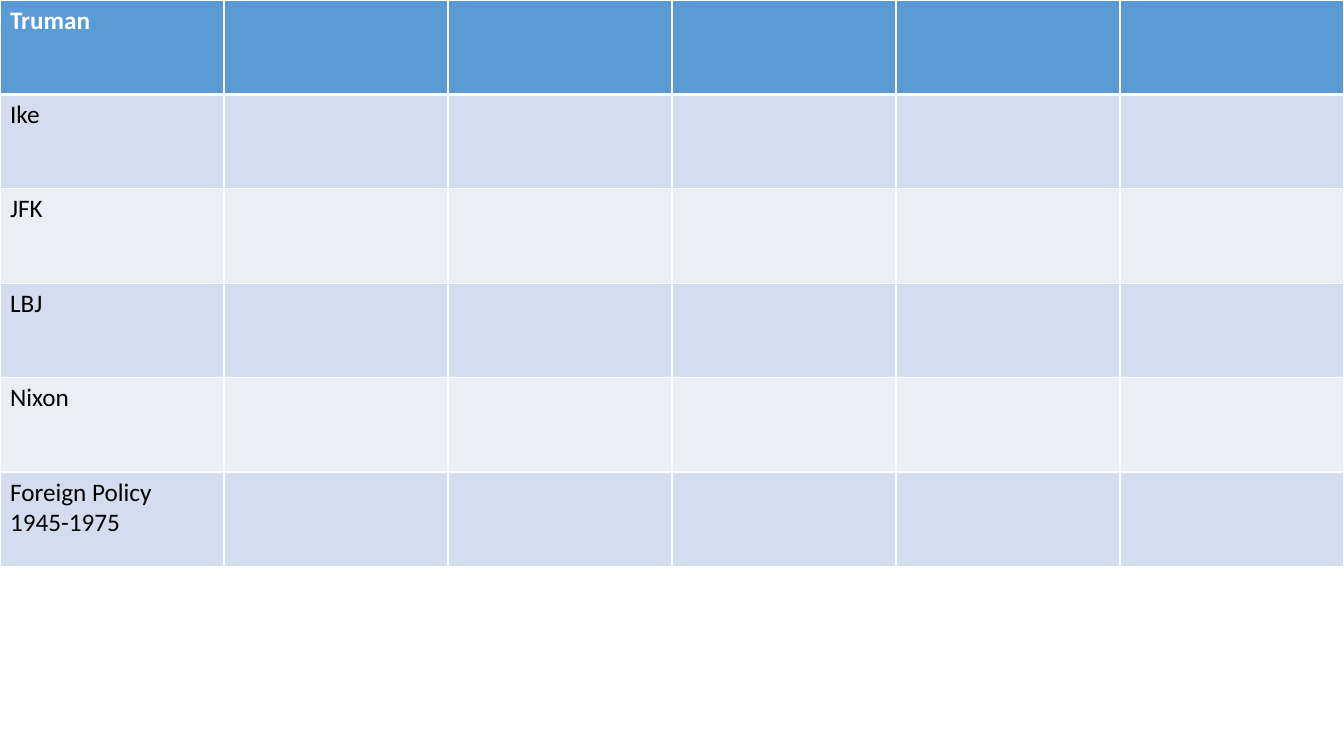
from lxml import etree
from pptx import Presentation
from pptx.dml.color import RGBColor
from pptx.oxml import ns
from pptx.util import Inches, Pt

WHITE = RGBColor(0xFF, 0xFF, 0xFF)
BLACK = RGBColor(0, 0, 0)
BLUE = RGBColor(0x5B, 0x9B, 0xD5)
BANDS = [RGBColor(0xEA, 0xEF, 0xF7), RGBColor(0xD2, 0xDE, 0xEF)]
FONT = "Calibri"
TOPICS = ["Truman", "Ike", "JFK", "LBJ", "Nixon", "Foreign Policy 1945-1975"]
COLS = 6


def add_edge(cell, side, width):
    props = cell._tc.get_or_add_tcPr()
    line = etree.SubElement(props, ns.qn(f"a:ln{side}"), w=str(Pt(width)))
    fill = etree.SubElement(line, ns.qn("a:solidFill"))
    etree.SubElement(fill, ns.qn("a:srgbClr"), val=str(WHITE))


def style_cell(cell, row):
    thick = {(0, "B"), (1, "T")}
    for side in "LRTB":
        add_edge(cell, side, 3 if (row, side) in thick else 1)
    cell.fill.solid()
    cell.fill.fore_color.rgb = BANDS[row % 2] if row else BLUE


def set_topic(cell, topic, head):
    cell.text_frame.text = topic
    font = cell.text_frame.paragraphs[0].runs[0].font
    font.name = FONT
    font.size = Pt(18)
    font.bold = head
    font.color.rgb = WHITE if head else BLACK


def add_grid(slide):
    frame = slide.shapes.add_table(
        len(TOPICS), COLS, 0, 0, Inches(13.33), Inches(5.62)
    )
    table = frame.table
    for row, topic in enumerate(TOPICS):
        for col in range(COLS):
            style_cell(table.cell(row, col), row)
        set_topic(table.cell(row, 0), topic, row == 0)


def main():
    deck = Presentation()
    deck.slide_width = Inches(13.33)
    deck.slide_height = Inches(7.5)
    slide = deck.slides.add_slide(deck.slide_layouts[6])
    add_grid(slide)
    deck.save("out.pptx")


if __name__ == "__main__":
    main()
